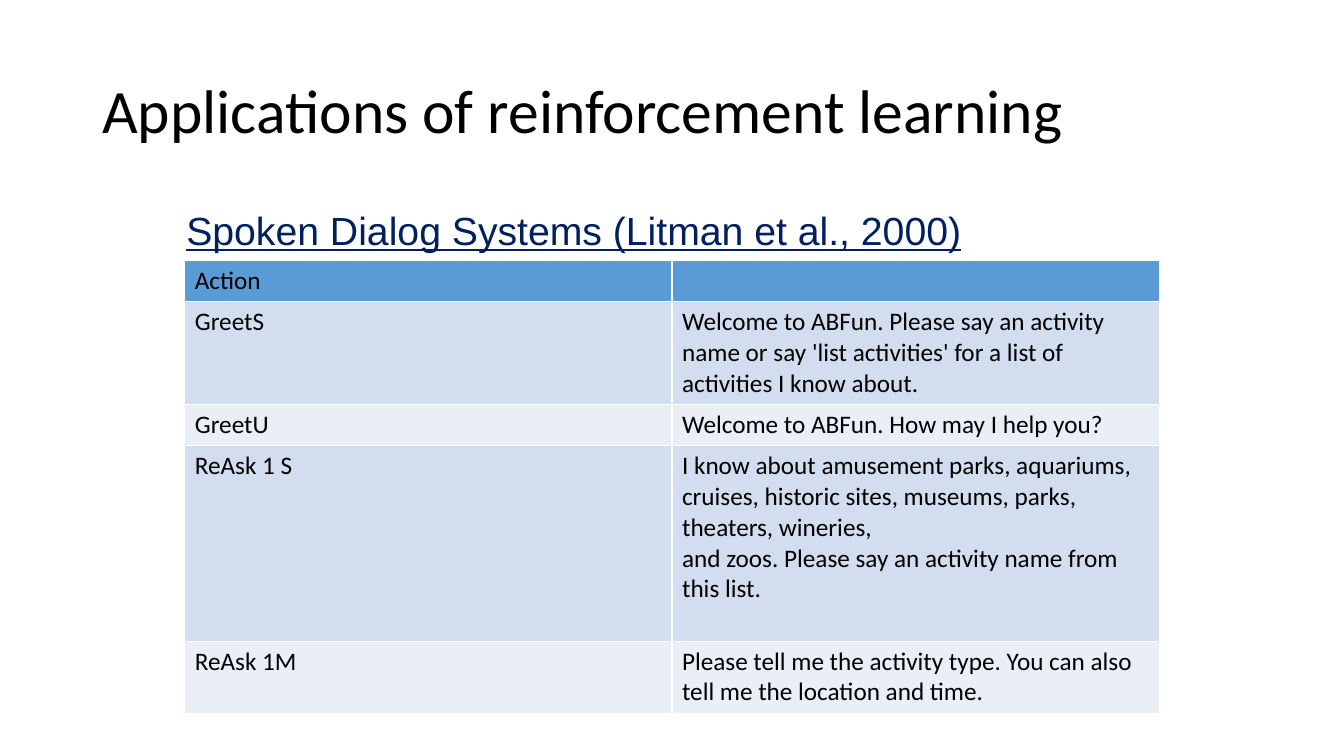
from pptx import Presentation
from pptx.dml.color import RGBColor
from pptx.enum.text import MSO_ANCHOR
from pptx.util import Inches, Pt

BLACK = RGBColor(0x00, 0x00, 0x00)
NAVY = RGBColor(0x00, 0x20, 0x60)
HEADER_BLUE = RGBColor(0x5B, 0x9B, 0xD5)
BANDS = (RGBColor(0xD2, 0xDE, 0xEF), RGBColor(0xEA, 0xEF, 0xF7))

GRID_COLUMNS, GRID_ROWS = 160, 90
LINE_ROWS, PADDING_ROWS = 3.67, 1.24

DIALOG_ACTIONS = [
    (1, "Action", []),
    (3, "GreetS", ["Welcome to ABFun. Please say an activity name or say "
                   "'list activities' for a list of activities I know about."]),
    (1, "GreetU", ["Welcome to ABFun. How may I help you?"]),
    (6, "ReAsk 1 S", ["I know about amusement parks, aquariums, cruises, historic sites, "
                      "museums, parks, theaters, wineries,",
                      "and zoos. Please say an activity name from this list."]),
    (2, "ReAsk 1M", ["Please tell me the activity type. You can also tell me "
                     "the location and time."]),
]


class SlideBuilder:
    body_font = "Calibri"
    body_size = 18

    def __init__(self, presentation):
        self.slide = presentation.slides.add_slide(presentation.slide_layouts[6])
        self.column = presentation.slide_width / GRID_COLUMNS
        self.row = presentation.slide_height / GRID_ROWS

    def place(self, left, top, width, height):
        return (round(left * self.column), round(top * self.row),
                round(width * self.column), round(height * self.row))

    def add_text_run(self, paragraph, text, size=body_size, font=body_font,
                     color=BLACK, underline=None):
        run = paragraph.add_run()
        run.text = text
        run.font.name = font
        run.font.size = Pt(size)
        run.font.bold = False
        run.font.underline = underline
        run.font.color.rgb = color

    def text(self, area, text, anchor=MSO_ANCHOR.TOP, spacing=1.0, **style):
        frame = self.slide.shapes.add_textbox(*self.place(*area)).text_frame
        frame.word_wrap = True
        frame.vertical_anchor = anchor
        paragraph = frame.paragraphs[0]
        paragraph.line_spacing = spacing
        self.add_text_run(paragraph, text, **style)

    def cell(self, cell, lines, fill):
        cell.fill.solid()
        cell.fill.fore_color.rgb = fill
        for index, line in enumerate(lines):
            frame = cell.text_frame
            paragraph = frame.add_paragraph() if index else frame.paragraphs[0]
            self.add_text_run(paragraph, line)

    def table(self, left, top, width, actions):
        heights = [PADDING_ROWS + lines * LINE_ROWS for lines, _, _ in actions]
        area = self.place(left, top, width, sum(heights))
        table = self.slide.shapes.add_table(len(actions), 2, *area).table
        for index, (_, action, prompt) in enumerate(actions):
            table.rows[index].height = round(heights[index] * self.row)
            fill = BANDS[(index - 1) % 2] if index else HEADER_BLUE
            self.cell(table.cell(index, 0), [action], fill)
            self.cell(table.cell(index, 1), prompt, fill)


def main():
    presentation = Presentation()
    presentation.slide_width = Inches(13.33)
    presentation.slide_height = Inches(7.5)
    builder = SlideBuilder(presentation)
    builder.text((11, 4.8, 138, 17.4), "Applications of reinforcement learning",
                 anchor=MSO_ANCHOR.MIDDLE, spacing=0.9, size=44)
    builder.table(22, 31, 116, DIALOG_ACTIONS)
    builder.text((21, 24, 113, 7), "Spoken Dialog Systems (Litman et al., 2000)",
                 size=28, font="Arial", color=NAVY, underline=True)
    presentation.save("out.pptx")


if __name__ == "__main__":
    main()
